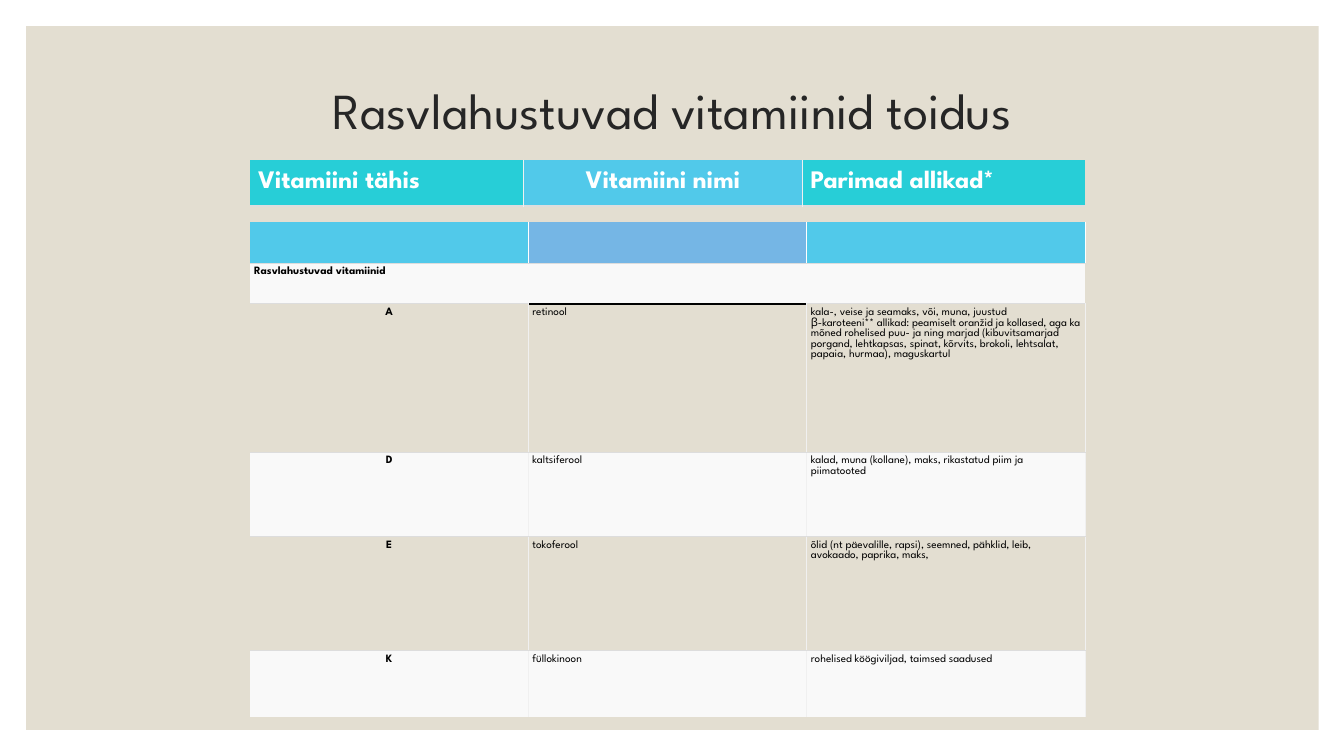
from dataclasses import dataclass

from lxml import etree
from pptx import Presentation
from pptx import util as u
from pptx.dml.color import RGBColor
from pptx.enum import shapes, text
from pptx.oxml import ns


@dataclass(frozen=True)
class Theme:
    font: str = "League Spartan"
    panel: str = "E3DED1"
    ink: str = "262626"
    body: str = "000000"
    white: str = "FFFFFF"
    teal: str = "27CED7"
    sky: str = "51C9EA"
    blue: str = "75B6E5"
    band: str = "F9F9F9"
    rule: str = "DDDDDD"
    side: str = "F0F0F0"
    title: int = 36
    head: int = 18
    small: int = 8


LEFT, MID = text.PP_ALIGN.LEFT, text.PP_ALIGN.CENTER
MAIN = (20.72, 20.72, 20.72)
HEAD = (20.36, 20.75, 21.05)
ROWS = (5.47, 5.4, 19.6, 11.15, 15.07, 8.9)
VITAMINS = (
    ("A", "retinool",
     "kala-, veise ja seamaks, või, muna, juustud\n"
     "β-karoteeni** allikad: peamiselt oranžid ja kollased, aga ka mõned "
     "rohelised puu- ja ning marjad (kibuvitsamarjad porgand, lehtkapsas, "
     "spinat, kõrvits, brokoli, lehtsalat, papaia, hurmaa), maguskartul"),
    ("D", "kaltsiferool",
     "kalad, muna (kollane), maks, rikastatud piim ja piimatooted"),
    ("E", "tokoferool",
     "õlid (nt päevalille, rapsi), seemned, pähklid, leib, avokaado, "
     "paprika, maks,"),
    ("K", "füllokinoon", "rohelised köögiviljad, taimsed saadused"),
)


class Deck:
    """Draws on one slide; lengths are percent of its width and height."""

    def __init__(self, theme):
        self.theme = theme
        self.file = Presentation()
        self.file.slide_width = u.Inches(13.33)
        self.file.slide_height = u.Inches(7.5)
        self.slide = self.file.slides.add_slide(self.file.slide_layouts[6])

    def wide(self, share):
        return int(self.file.slide_width * share / 100)

    def high(self, share):
        return int(self.file.slide_height * share / 100)

    def box(self, x, y, w, h):
        return self.wide(x), self.high(y), self.wide(w), self.high(h)

    def label(self, frame, words, size, color, bold=False, align=LEFT):
        frame.text = words
        for para in frame.paragraphs:
            para.alignment = align
            font = para.font
            font.name, font.size, font.bold = self.theme.font, u.Pt(size), bold
            font.color.rgb = RGBColor.from_string(color)

    def panel(self, *place):
        rect = self.slide.shapes.add_shape(
            shapes.MSO_SHAPE.RECTANGLE, *self.box(*place))
        rect.shadow.inherit = False
        rect.fill.solid()
        rect.fill.fore_color.rgb = RGBColor.from_string(self.theme.panel)
        rect.line.fill.background()

    def title(self, words, *place):
        frame = self.slide.shapes.add_textbox(*self.box(*place)).text_frame
        frame.word_wrap = True
        frame.vertical_anchor = text.MSO_ANCHOR.MIDDLE
        self.label(frame, words, self.theme.title, self.theme.ink, align=MID)
        frame.paragraphs[0].line_spacing = 0.9

    def table(self, x, y, cols, rows):
        """Adds a plain table without style bands."""
        place = self.box(x, y, sum(cols), sum(rows))
        grid = self.slide.shapes.add_table(len(rows), len(cols), *place).table
        grid.first_row = grid.horz_banding = False
        for col, share in zip(grid.columns, cols):
            col.width = self.wide(share)
        for row, share in zip(grid.rows, rows):
            row.height = self.high(share)
        return grid

    def cell(self, cell, fill=None, inset=0.04):
        cell.margin_left = cell.margin_right = u.Inches(inset)
        cell.margin_top = cell.margin_bottom = u.Inches(inset)
        if fill:
            cell.fill.solid()
            cell.fill.fore_color.rgb = RGBColor.from_string(fill)
        else:
            cell.fill.background()

    def edges(self, cell, **lines):
        """Sets sides L, R, T, B to (color, points); the rest get no line."""
        props = cell._tc.get_or_add_tcPr()
        for spot, side in enumerate("LRTB"):
            color, width = lines.get(side) or (None, 0)
            line = etree.Element(ns.qn(f"a:ln{side}"), w=str(u.Pt(width)))
            if color:
                fill = etree.SubElement(line, ns.qn("a:solidFill"))
                etree.SubElement(fill, ns.qn("a:srgbClr"), val=color)
            else:
                etree.SubElement(line, ns.qn("a:noFill"))
            props.insert(spot, line)


def add_head(deck):
    t = deck.theme
    grid = deck.table(18.6, 21.1, HEAD, (5.8,))
    names = ("Vitamiini tähis", "Vitamiini nimi", "Parimad allikad*")
    for i, name in enumerate(names):
        cell = grid.cell(0, i)
        deck.cell(cell, t.sky if i == 1 else t.teal, 0.08)
        cell.vertical_anchor = text.MSO_ANCHOR.MIDDLE
        deck.label(cell.text_frame, name, t.head, t.white, True,
                   MID if i == 1 else LEFT)
        side = (t.side, 0.75)
        deck.edges(cell, L=side if i else None, R=side if i < 2 else None,
                   B=(t.rule, 1.5))


def add_main(deck):
    t = deck.theme
    grid = deck.table(18.6, 29.33, MAIN, ROWS)
    rule, side, white = (t.rule, 0.75), (t.side, 0.75), (t.white, 0.75)

    for i, fill in enumerate((t.sky, t.blue, t.sky)):
        cell = grid.cell(0, i)
        deck.cell(cell, fill)
        deck.edges(cell, L=white if i else None, R=white, B=rule)

    group = grid.cell(1, 0)
    group.merge(grid.cell(1, 2))
    for i in range(3):
        cell = grid.cell(1, i)
        deck.cell(cell, t.band)
        deck.label(cell.text_frame, "" if i else "Rasvlahustuvad vitamiinid",
                   t.small, t.body, True)
        deck.edges(cell, T=rule, B=(t.body, 1.5) if i == 1 else rule)

    for r, vitamin in enumerate(VITAMINS, 2):
        for i, words in enumerate(vitamin):
            cell = grid.cell(r, i)
            deck.cell(cell, t.band if r % 2 else None)
            deck.label(cell.text_frame, words, t.small, t.body, i == 0,
                       LEFT if i else MID)
            top = (t.body, 1.5) if (r, i) == (2, 1) else rule
            deck.edges(cell, L=side if i else None, R=side, T=top,
                       B=rule if r < 5 else None)


def main():
    deck = Deck(Theme())
    deck.panel(1.95, 3.47, 96.17, 93.07)
    deck.title("Rasvlahustuvad vitamiinid toidus", 8.75, 5.2, 82.5, 19.6)
    add_head(deck)
    add_main(deck)
    deck.file.save("out.pptx")


if __name__ == "__main__":
    main()
